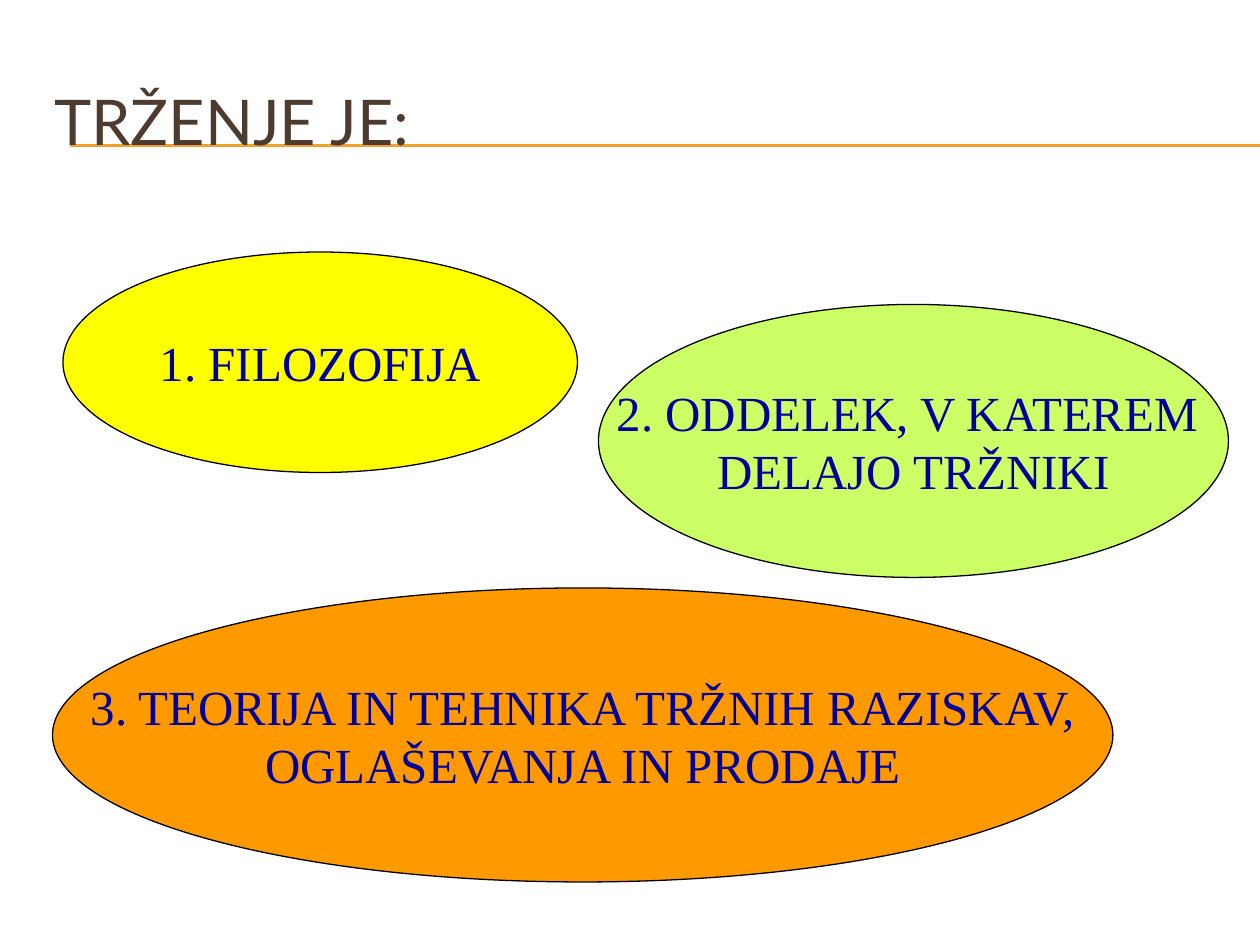
from dataclasses import dataclass
from lxml.etree import SubElement
from pptx import Presentation
from pptx.dml.color import RGBColor
from pptx.enum.shapes import MSO_CONNECTOR, MSO_SHAPE
from pptx.enum.text import MSO_ANCHOR, PP_ALIGN
from pptx.oxml.ns import qn
from pptx.util import Pt

SCALE = 7620


@dataclass(frozen=True)
class Theme:
    brown: str = "4E3B30"
    amber: str = "F0A22E"
    navy: str = "000099"
    black: str = "000000"
    yellow: str = "FFFF00"
    lime: str = "CCFF66"
    orange: str = "FF9900"
    head: str = "Lato"
    body: str = "Times New Roman"
    large: int = 36
    small: int = 28
    thin: float = 0.75


class Painter:
    """Draws styled elements on the current slide, with lengths in px."""

    def __init__(self, theme, slide):
        self.theme = theme
        self.slide = slide

    def scale(self, *sizes):
        return [size * SCALE for size in sizes]

    def stroke(self, line, color):
        line.color.rgb = RGBColor.from_string(color)
        line.width = Pt(self.theme.thin)

    def label(self, frame, lines, font, size, color, align):
        frame.vertical_anchor = MSO_ANCHOR.MIDDLE
        for i, line in enumerate(lines):
            para = frame.add_paragraph() if i else frame.paragraphs[0]
            para.alignment = align
            run = para.add_run()
            run.text = line
            run.font.name = font
            run.font.size = Pt(size)
            run.font.color.rgb = RGBColor.from_string(color)

    def rule(self, left, right, y):
        line = self.slide.shapes.add_connector(
            MSO_CONNECTOR.STRAIGHT, *self.scale(left, y, right, y))
        self.stroke(line.line, self.theme.amber)
        SubElement(line._element.spPr, qn("a:effectLst"))

    def title(self, box, text):
        frame = self.slide.shapes.add_textbox(*self.scale(*box)).text_frame
        frame.word_wrap = True
        self.label(frame, [text], self.theme.head, self.theme.large,
                   self.theme.brown, PP_ALIGN.LEFT)

    def oval(self, box, fill, lines):
        shape = self.slide.shapes.add_shape(MSO_SHAPE.OVAL, *self.scale(*box))
        shape.shadow.inherit = False
        shape.fill.solid()
        shape.fill.fore_color.rgb = RGBColor.from_string(fill)
        self.stroke(shape.line, self.theme.black)
        shape.text_frame.word_wrap = False
        self.label(shape.text_frame, lines, self.theme.body, self.theme.small,
                   self.theme.navy, PP_ALIGN.CENTER)


def main():
    deck = Presentation()
    deck.slide_width, deck.slide_height = 1200 * SCALE, 900 * SCALE
    theme = Theme()
    paint = Painter(theme, deck.slides.add_slide(deck.slide_layouts[6]))
    for y in (138, 139):
        paint.rule(67, 1200, y)
    paint.title((40, 60, 1140, 110), "TRŽENJE JE:")
    paint.oval((60, 240, 490, 210), theme.yellow, ["1. FILOZOFIJA"])
    paint.oval((570, 290, 600, 260), theme.lime,
               ["2. ODDELEK, V KATEREM ", "DELAJO TRŽNIKI"])
    paint.oval((50, 560, 1010, 280), theme.orange,
               ["3. TEORIJA IN TEHNIKA TRŽNIH RAZISKAV,",
                "OGLAŠEVANJA IN PRODAJE"])
    deck.save("out.pptx")


if __name__ == "__main__":
    main()
